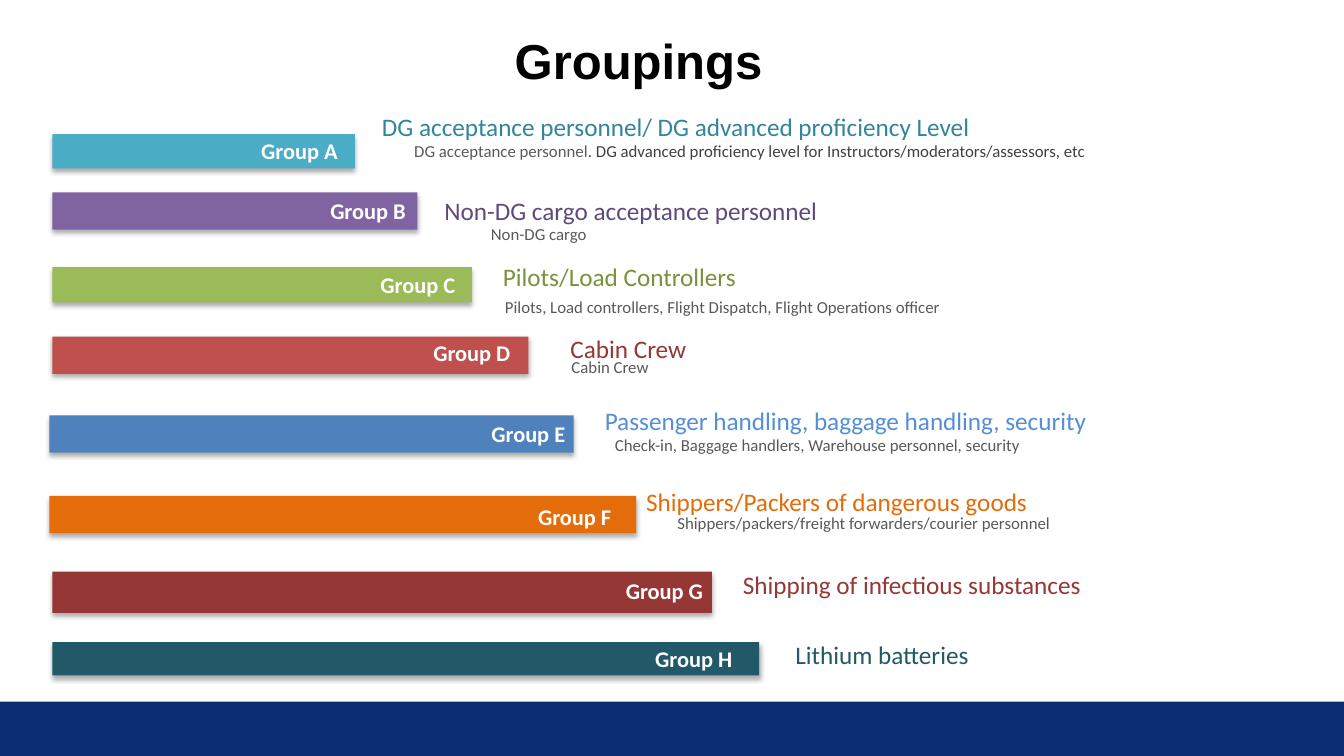
"""Build the Groupings slide: eight stepped bars, each with its staff group."""
from dataclasses import dataclass

import lxml.etree
import pptx
import pptx.dml.color
import pptx.enum.shapes
import pptx.enum.text
import pptx.oxml
import pptx.util

Inches = pptx.util.Inches


@dataclass
class Theme:
    heading_font: str = "Arial"
    body_font: str = "Calibri"
    title_size: int = 35
    role_size: int = 18
    label_size: int = 16
    detail_size: int = 12
    black: str = "000000"
    white: str = "FFFFFF"
    footer: str = "0A2C71"
    detail: str = "595959"
    detail_dark: str = "404040"
    teal: str = "4BACC6"
    teal_text: str = "31859C"
    purple: str = "8064A2"
    purple_text: str = "604A7B"
    green: str = "9BBB59"
    green_text: str = "77933C"
    red: str = "C0504D"
    dark_red: str = "953735"
    blue: str = "4F81BD"
    blue_text: str = "558ED5"
    orange: str = "E46C0A"
    dark_teal: str = "215968"


theme = Theme()
SHADOW = """<a:effectLst xmlns:a="http://schemas.openxmlformats.org/drawingml/2006/main">
<a:outerShdw blurRad="44450" dist="27940" dir="5400000" algn="ctr" rotWithShape="0">
<a:srgbClr val="000000"><a:alpha val="32000"/></a:srgbClr></a:outerShdw></a:effectLst>"""

prs = pptx.Presentation()
prs.slide_width = Inches(13.33)
prs.slide_height = Inches(7.5)
s = prs.slides.add_slide(prs.slide_layouts[6])


def add_bar(box, color):
    sp = s.shapes.add_shape(pptx.enum.shapes.MSO_SHAPE.RECTANGLE, *map(Inches, box))
    sp.shadow.inherit = False
    sp.fill.solid()
    sp.fill.fore_color.rgb = pptx.dml.color.RGBColor.from_string(color)
    sp.line.fill.background()
    return sp


def add_text(box, runs, size, font=theme.body_font, heavy=False):
    tf = s.shapes.add_textbox(*map(Inches, box)).text_frame
    tf.word_wrap = True
    tf.auto_size = pptx.enum.text.MSO_AUTO_SIZE.SHAPE_TO_FIT_TEXT
    p = tf.paragraphs[0]
    p.font.name = font
    p.font.size = pptx.util.Pt(size)
    if heavy:
        p.font.bold = True
        p.alignment = pptx.enum.text.PP_ALIGN.CENTER
    for text, color in runs:
        r = p.add_run()
        r.text = text
        r.font.color.rgb = pptx.dml.color.RGBColor.from_string(color)


add_bar((0, 6.96, 13.33, 0.54), theme.footer)

bars = [
    ("Group A", (0.52, 1.33, 3, 0.34), theme.teal, (2.39, 1.31, 1.16)),
    ("Group B", (0.52, 1.91, 3.62, 0.37), theme.purple, (3.01, 1.91, 1.28)),
    ("Group C", (0.52, 2.65, 4.16, 0.35), theme.green, (3.46, 2.64, 1.37)),
    ("Group D", (0.52, 3.34, 4.72, 0.37), theme.red, (4.02, 3.32, 1.32)),
    ("Group E", (0.49, 4.12, 5.2, 0.37), theme.blue, (4.58, 4.12, 1.32)),
    ("Group F", (0.49, 4.92, 5.82, 0.37), theme.orange, (5.07, 4.94, 1.26)),
    ("Group G", (0.52, 5.67, 6.54, 0.41), theme.dark_red, (5.93, 5.68, 1.32)),
    ("Group H", (0.52, 6.37, 7.01, 0.33), theme.dark_teal, (6.22, 6.35, 1.32)),
]
for label, box, color, label_at in bars:
    sp = add_bar(box, color)
    spPr = sp._element.spPr
    spPr.remove(spPr.find(pptx.oxml.ns.qn("a:effectLst")))
    spPr.append(lxml.etree.fromstring(SHADOW))
    add_text((*label_at, 0.37), [(label, theme.white)], theme.label_size, heavy=True)

roles = [
    ("DG acceptance personnel/ DG advanced proficiency Level", theme.teal_text, (3.69, 1.06, 7.45, 0.9)),
    ("Non-DG cargo acceptance personnel", theme.purple_text, (4.31, 1.89, 5.12, 0.4)),
    ("Pilots/Load Controllers", theme.green_text, (4.89, 2.54, 4.84, 0.4)),
    ("Cabin Crew", theme.dark_red, (5.56, 3.26, 4.72, 0.4)),
    ("Passenger handling, baggage handling, security", theme.blue_text, (5.9, 3.97, 6.42, 0.4)),
    ("Shippers/Packers of dangerous goods", theme.orange, (6.31, 4.78, 4.86, 0.49)),
    ("Shipping of infectious substances", theme.dark_red, (7.27, 5.6, 4.86, 0.61)),
    ("Lithium batteries", theme.dark_teal, (7.79, 6.29, 4.72, 0.4)),
]
for role, color, box in roles:
    add_text(box, [(role, color)], theme.role_size)

instructors = ". DG advanced proficiency level for Instructors/moderators/assessors, etc"
details = [
    ([("DG acceptance personnel", theme.detail), (instructors, theme.detail_dark)], (4.01, 1.35, 7.51, 0.46)),
    ([("Non-DG cargo", theme.detail)], (4.77, 2.17, 5.13, 0.3)),
    ([("Pilots, Load controllers, Flight Dispatch, Flight Operations officer", theme.detail)], (4.91, 2.89, 4.9, 0.3)),
    ([("Cabin Crew", theme.detail)], (5.57, 3.49, 4.76, 0.3)),
    ([("Check-in, Baggage handlers, Warehouse personnel, security", theme.detail)], (6, 4.26, 6.51, 0.39)),
    ([("Shippers/packers/freight forwarders/courier personnel", theme.detail)], (6.62, 5.04, 4.9, 0.37)),
]
for runs, box in details:
    add_text(box, runs, theme.detail_size)

add_text((3, 0.25, 6.67, 0.69), [("Groupings", theme.black)], theme.title_size, theme.heading_font, heavy=True)

prs.save("out.pptx")
